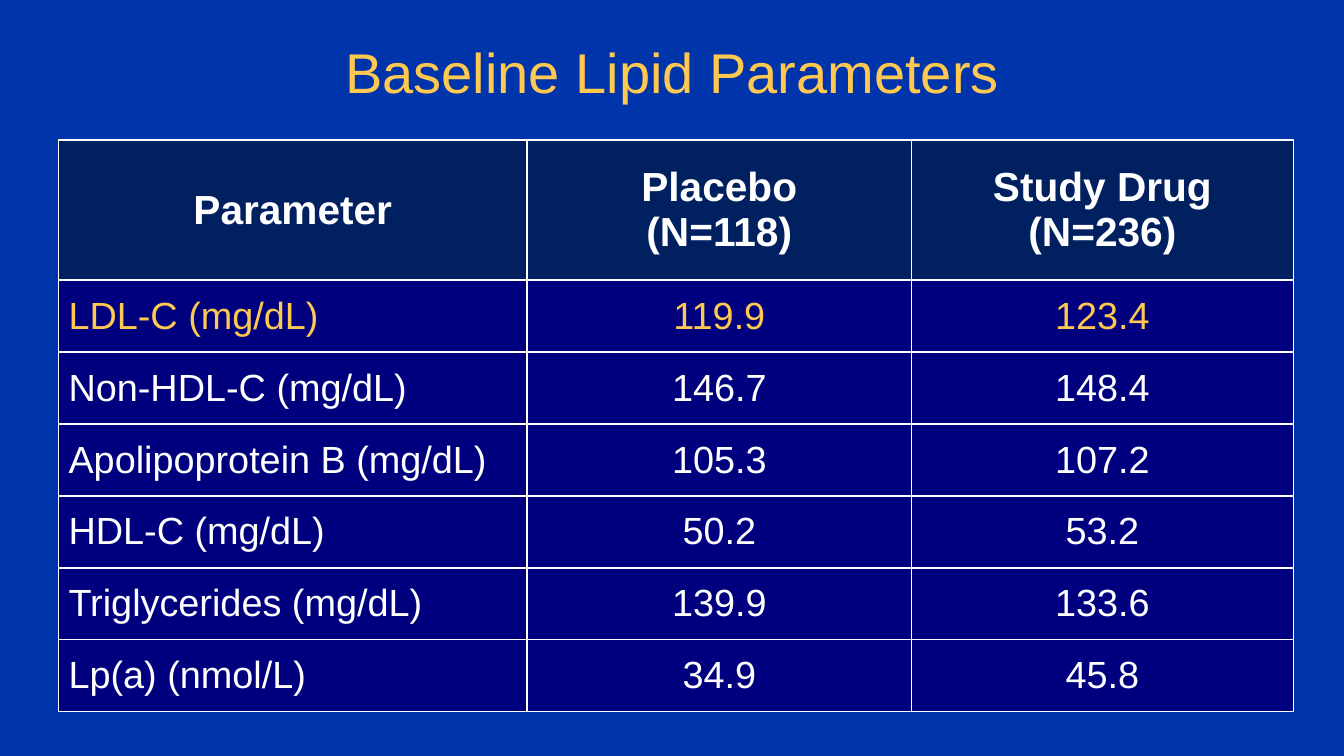
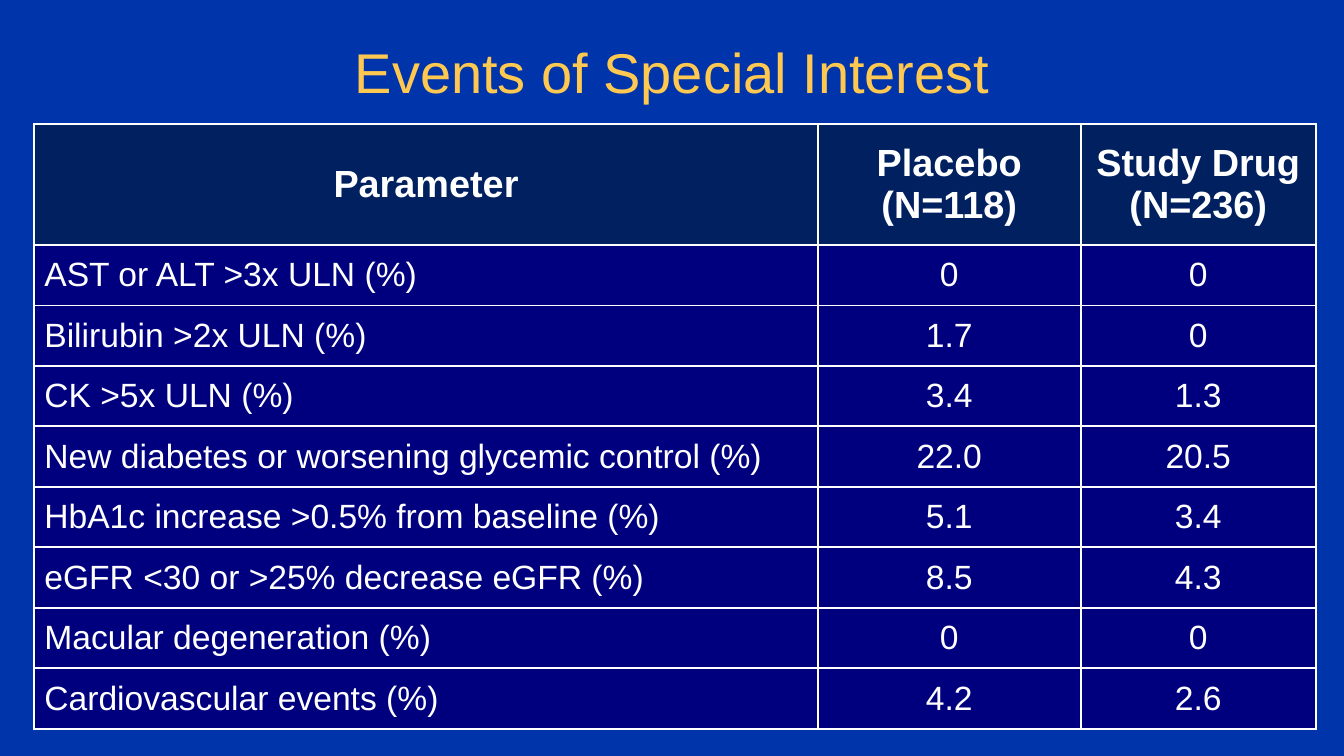
"""Build two clinical result slides, each with a title and a bordered table."""
import dataclasses

import lxml.etree
import pptx
import pptx.dml.color
import pptx.enum.text
import pptx.oxml.ns
import pptx.util

Inches = pptx.util.Inches
Align = pptx.enum.text.PP_ALIGN
MIDDLE = pptx.enum.text.MSO_ANCHOR.MIDDLE


@dataclasses.dataclass(frozen=True)
class Theme:
    """Colours, font and type sizes that the slides share."""
    font: str = "Arial"
    background: str = "0034AA"
    accent: str = "FFC850"
    text: str = "FFFFFF"
    header_fill: str = "002060"
    body_fill: str = "00007F"
    border: str = "FFFFFF"
    border_width: float = 1.5
    title_size: int = 40


@dataclasses.dataclass(frozen=True)
class Box:
    """A region of a slide in inches."""
    left: float
    top: float
    width: float
    height: float

    def lengths(self):
        """Return the four values as lengths."""
        return [Inches(value) for value in dataclasses.astuple(self)]


THEME = Theme()
TITLE_BOX = Box(1, 0.27, 11.33, 0.88)
HEADERS = ("Parameter", "Placebo\n(N=118)", "Study Drug\n(N=236)")

TABLE_SLIDES = (
    {
        "title": "Baseline Lipid Parameters",
        "box": Box(0.58, 1.39, 12.26, 5.67),
        "column_widths": (4.65, 3.81, 3.79),
        "header_height": 1.39,
        "header_size": 29,
        "header_spacing": 4,
        "body_size": 27,
        "highlighted": ("LDL-C (mg/dL)",),
        "rows": (
            ("LDL-C (mg/dL)", "119.9", "123.4"),
            ("Non-HDL-C (mg/dL)", "146.7", "148.4"),
            ("Apolipoprotein B (mg/dL)", "105.3", "107.2"),
            ("HDL-C (mg/dL)", "50.2", "53.2"),
            ("Triglycerides (mg/dL)", "139.9", "133.6"),
            ("Lp(a) (nmol/L)", "34.9", "45.8"),
        ),
    },
    {
        "title": "Events of Special Interest",
        "box": Box(0.34, 1.23, 12.71, 6),
        "column_widths": (7.77, 2.61, 2.33),
        "header_height": 1.2,
        "header_size": 27,
        "header_spacing": 0,
        "body_size": 24,
        "highlighted": (),
        "rows": (
            ("AST or ALT >3x ULN (%)", "0", "0"),
            ("Bilirubin >2x ULN (%)", "1.7", "0"),
            ("CK >5x ULN (%)", "3.4", "1.3"),
            ("New diabetes or worsening glycemic control (%)", "22.0", "20.5"),
            ("HbA1c increase >0.5% from baseline (%)", "5.1", "3.4"),
            ("eGFR <30 or >25% decrease eGFR (%)", "8.5", "4.3"),
            ("Macular degeneration (%)", "0", "0"),
            ("Cardiovascular events (%)", "4.2", "2.6"),
        ),
    },
)


def set_attributes(target, values):
    """Set each named attribute of the target."""
    for name, value in values.items():
        setattr(target, name, value)


def set_fill(fill, colour):
    """Make a fill solid in the given colour."""
    fill.solid()
    fill.fore_color.rgb = pptx.dml.color.RGBColor.from_string(colour)


def write_text(text_frame, text, size, colour, bold=False, alignment=Align.CENTER, spacing=0):
    """Write one formatted paragraph, with line breaks kept inside it."""
    paragraph = text_frame.paragraphs[0]
    paragraph.text = text
    set_attributes(paragraph, {
        "alignment": alignment,
        "space_before": pptx.util.Pt(spacing),
        "space_after": pptx.util.Pt(spacing),
    })
    for run in paragraph.runs:
        set_attributes(run.font, {"name": THEME.font, "size": pptx.util.Pt(size), "bold": bold})
        run.font.color.rgb = pptx.dml.color.RGBColor.from_string(colour)


def add_borders(cell):
    """Draw the theme border on all four sides of a cell."""
    properties = cell._tc.get_or_add_tcPr()
    qualified = pptx.oxml.ns.qn
    for position, side in enumerate(("a:lnL", "a:lnR", "a:lnT", "a:lnB")):
        line = lxml.etree.Element(qualified(side), w=str(pptx.util.Pt(THEME.border_width)))
        fill = lxml.etree.SubElement(line, qualified("a:solidFill"))
        lxml.etree.SubElement(fill, qualified("a:srgbClr"), val=THEME.border)
        properties.insert(position, line)


def add_title(slide, box, title):
    """Place the centred slide title in its box."""
    text_frame = slide.shapes.add_textbox(*box.lengths()).text_frame
    set_attributes(text_frame, {"word_wrap": True, "vertical_anchor": MIDDLE})
    write_text(text_frame, title, THEME.title_size, THEME.accent)


def add_result_table(slide, box, content):
    """Fill the box with a header row and equal body rows."""
    rows = (HEADERS, *content["rows"])
    table = slide.shapes.add_table(len(rows), len(HEADERS), *box.lengths()).table
    body_height = (box.height - content["header_height"]) / len(content["rows"])
    for column, width in zip(table.columns, content["column_widths"]):
        column.width = Inches(width)
    for row_index, values in enumerate(rows):
        is_header = row_index == 0
        table.rows[row_index].height = Inches(content["header_height"] if is_header else body_height)
        colour = THEME.accent if values[0] in content["highlighted"] else THEME.text
        for column_index, value in enumerate(values):
            cell = table.cell(row_index, column_index)
            cell.vertical_anchor = MIDDLE
            set_fill(cell.fill, THEME.header_fill if is_header else THEME.body_fill)
            add_borders(cell)
            is_label = column_index == 0 and not is_header
            write_text(
                cell.text_frame, value,
                size=content["header_size"] if is_header else content["body_size"],
                colour=colour,
                bold=is_header,
                alignment=Align.LEFT if is_label else Align.CENTER,
                spacing=content["header_spacing"] if is_header else 0,
            )


def add_table_slide(presentation, content):
    """Add one slide with a title above a result table."""
    slide = presentation.slides.add_slide(presentation.slide_layouts[6])
    set_fill(slide.background.fill, THEME.background)
    add_title(slide, TITLE_BOX, content["title"])
    add_result_table(slide, content["box"], content)


def main():
    """Build and save the presentation."""
    presentation = pptx.Presentation()
    set_attributes(presentation, {"slide_width": Inches(13.33), "slide_height": Inches(7.5)})
    for content in TABLE_SLIDES:
        add_table_slide(presentation, content)
    presentation.save("out.pptx")


if __name__ == "__main__":
    main()
